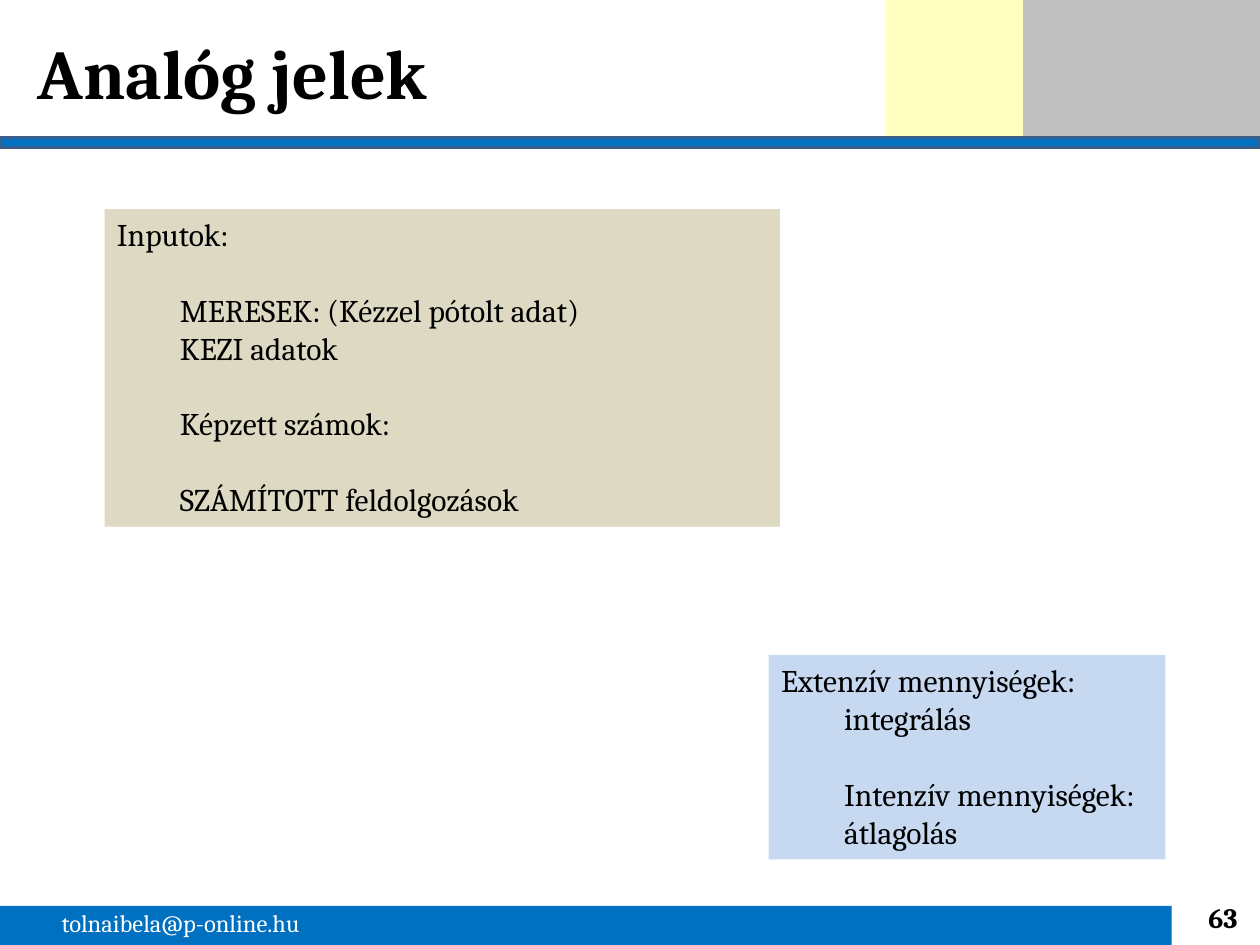
from lxml import etree
from pptx import Presentation
from pptx import util as u
from pptx.dml.color import RGBColor
from pptx.enum import shapes, text
from pptx.oxml.ns import qn

BLUE = "0070C0"
LINE_GAP = 21.6  # one 18 pt text line, in points


def color(value):
    return RGBColor.from_string(value)


class SlideBuilder:
    font = "Cambria"
    ink = "000000"

    def __init__(self, slide):
        self.slide = slide

    def bar(self, left, top, width, height, fill, alpha=None, line=None):
        box = self.slide.shapes.add_shape(
            shapes.MSO_SHAPE.RECTANGLE,
            *(u.Inches(side) for side in (left, top, width, height)))
        box.shadow.inherit = False
        box.fill.solid()
        box.fill.fore_color.rgb = color(fill)
        if alpha is not None:
            tint = box._element.spPr.find(qn("a:solidFill"))[0]
            etree.SubElement(tint, qn("a:alpha"), val=str(alpha * 1000))
        if line:
            box.line.color.rgb = color(line)
            box.line.width = u.Pt(2)
        else:
            box.line.fill.background()
        return box

    def add_words(self, para, words, size, ink=None, bold=False):
        span = para.add_run()
        span.text = words
        span.font.name = self.font
        span.font.size = u.Pt(size)
        span.font.bold = bold
        span.font.color.rgb = color(ink or self.ink)

    def title(self, words, left, top, width, height):
        box = self.slide.shapes.title
        box.left, box.top = u.Inches(left), u.Inches(top)
        box.width, box.height = u.Inches(width), u.Inches(height)
        box.text_frame.vertical_anchor = text.MSO_ANCHOR.MIDDLE
        para = box.text_frame.paragraphs[0]
        para.alignment = text.PP_ALIGN.LEFT
        self.add_words(para, words, 40, bold=True)

    def label(self, words, left, top, width, height, size, ink=None, bold=False,
              align=text.PP_ALIGN.LEFT, anchor=text.MSO_ANCHOR.TOP):
        box = self.slide.shapes.add_textbox(
            *(u.Inches(side) for side in (left, top, width, height)))
        box.text_frame.word_wrap = True
        box.text_frame.vertical_anchor = anchor
        para = box.text_frame.paragraphs[0]
        para.alignment = align
        self.add_words(para, words, size, ink, bold)

    def panel(self, heading, items, left, top, width, height, fill):
        """Heading followed by indented (words, gap before) items."""
        box = self.bar(left, top, width, height, fill)
        frame = box.text_frame
        frame.word_wrap = True
        frame.vertical_anchor = text.MSO_ANCHOR.TOP
        para = frame.paragraphs[0]
        para.alignment = text.PP_ALIGN.LEFT
        self.add_words(para, heading, 18)
        for words, gap in items:
            para = frame.add_paragraph()
            para.alignment = text.PP_ALIGN.LEFT
            para.space_before = u.Pt(LINE_GAP if gap else 0)
            para._p.get_or_add_pPr().set("marL", str(u.Inches(0.5)))
            self.add_words(para, words, 18)


def main():
    deck = Presentation()
    deck.slide_width, deck.slide_height = u.Inches(10), u.Inches(7.5)
    page = SlideBuilder(deck.slides.add_slide(deck.slide_layouts[5]))

    # Header and footer bands
    page.bar(8.12, 0, 1.88, 1.09, "BFBFBF")
    page.bar(0, 7.19, 9.3, 0.31, BLUE)
    page.bar(7.03, 0, 1.09, 1.09, "FFFF00", alpha=25)
    page.bar(0, 1.09, 10, 0.08, BLUE, line="3A5F8C")

    # Title, contact and page number
    page.title("Analóg jelek", 0.2, 0.21, 9.53, 0.72)
    page.label("tolnaibela@p-online.hu", 0.39, 7.16, 2.73, 0.34, 14, "FFFFFF")
    page.label("63", 9.33, 7.06, 0.59, 0.44, 16, bold=True,
               align=text.PP_ALIGN.RIGHT, anchor=text.MSO_ANCHOR.MIDDLE)

    # Content panels
    page.panel("Inputok:", [
        ("MERESEK: (Kézzel pótolt adat)", True),
        ("KEZI adatok", False),
        ("Képzett számok:", True),
        ("SZÁMÍTOTT feldolgozások", True),
    ], 0.83, 1.66, 5.36, 2.52, "DDD9C3")
    page.panel("Extenzív mennyiségek:", [
        ("integrálás", False),
        ("Intenzív mennyiségek:", True),
        ("átlagolás", False),
    ], 6.1, 5.2, 3.15, 1.62, "C6D9F1")

    deck.save("out.pptx")


if __name__ == "__main__":
    main()
